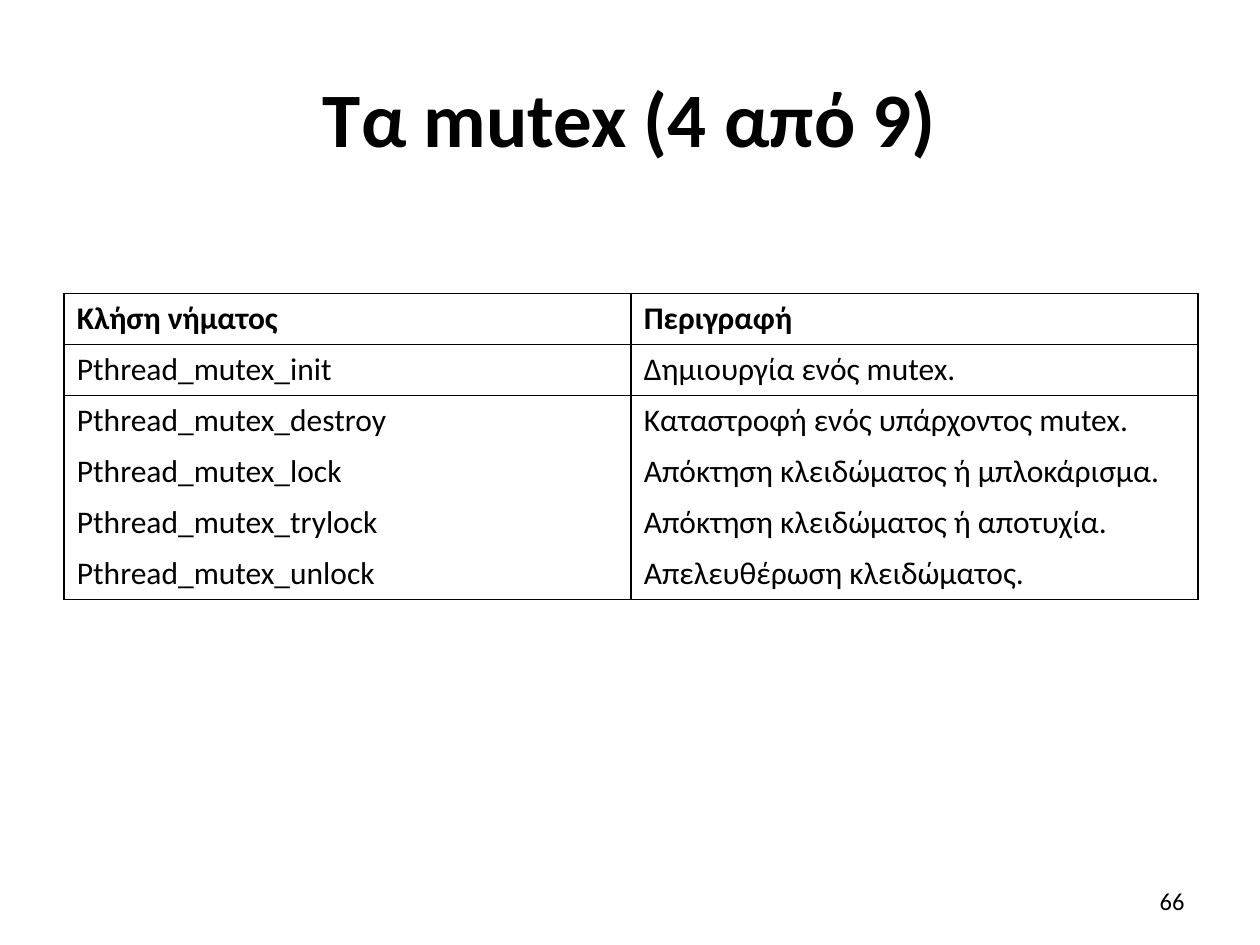
from dataclasses import dataclass

from lxml.etree import SubElement
from pptx import Presentation
from pptx.dml.color import RGBColor
from pptx.enum.text import MSO_ANCHOR, PP_ALIGN
from pptx.oxml.ns import qn
from pptx.util import Inches, Pt

WIDTH, HEIGHT = Inches(10), Inches(7.5)
FONT, BLACK = "Calibri", "000000"
ROW_HEIGHT = Inches(0.405)
CALLS = [
    ("Κλήση νήματος", "Περιγραφή"),
    ("Pthread_mutex_init", "Δημιουργία ενός mutex."),
    ("Pthread_mutex_destroy", "Καταστροφή ενός υπάρχοντος mutex."),
    ("Pthread_mutex_lock", "Απόκτηση κλειδώματος ή μπλοκάρισμα."),
    ("Pthread_mutex_trylock", "Απόκτηση κλειδώματος ή αποτυχία."),
    ("Pthread_mutex_unlock", "Απελευθέρωση κλειδώματος."),
]
RULED_EDGES = {0, 1, 2, len(CALLS)}  # horizontal edges, counted from the top


@dataclass
class Label:
    """Text in a box whose place is given as shares of the slide."""
    text: str
    left: float
    top: float
    width: float
    height: float
    size: int
    align: PP_ALIGN
    bold: bool = False


LABELS = [
    Label("Τα mutex (4 από 9)", 0.05, 0.04, 0.9, 1 / 6, 44, PP_ALIGN.CENTER, True),
    Label("66", 0.717, 0.927, 0.233, 0.053, 14, PP_ALIGN.RIGHT),
]


def color(value: str) -> RGBColor:
    return RGBColor.from_string(value)


def style_paragraph(paragraph, size: int, bold: bool, align: PP_ALIGN) -> None:
    paragraph.alignment = align
    font = paragraph.font
    font.name, font.size, font.bold = FONT, Pt(size), bold
    font.color.rgb = color(BLACK)


def draw_label(page, label: Label) -> None:
    box = page.shapes.add_textbox(
        int(label.left * WIDTH), int(label.top * HEIGHT),
        int(label.width * WIDTH), int(label.height * HEIGHT))
    frame = box.text_frame
    frame.word_wrap = True
    frame.vertical_anchor = MSO_ANCHOR.MIDDLE
    frame.text = label.text
    style_paragraph(frame.paragraphs[0], label.size, label.bold, label.align)


def set_borders(cell, top: bool, bottom: bool) -> None:
    """Rule both sides, and the top and bottom where asked."""
    properties = cell._tc.get_or_add_tcPr()
    for side, ruled in {"L": True, "R": True, "T": top, "B": bottom}.items():
        line = SubElement(properties, qn(f"a:ln{side}"), w=str(Pt(1)))
        if ruled:
            fill = SubElement(line, qn("a:solidFill"))
            SubElement(fill, qn("a:srgbClr"), val=BLACK)
        else:
            SubElement(line, qn("a:noFill"))


def draw_calls_table(page) -> None:
    table = page.shapes.add_table(
        len(CALLS), 2, Inches(0.51), Inches(2.33),
        Inches(9), ROW_HEIGHT * len(CALLS)).table
    table.first_row = table.horz_banding = False
    for row, texts in enumerate(CALLS):
        table.rows[row].height = ROW_HEIGHT
        for column, text in enumerate(texts):
            cell = table.cell(row, column)
            cell.text = text
            style_paragraph(cell.text_frame.paragraphs[0], 18, row == 0, PP_ALIGN.LEFT)
            set_borders(cell, row in RULED_EDGES, row + 1 in RULED_EDGES)
            cell.fill.background()


def main() -> None:
    deck = Presentation()
    deck.slide_width, deck.slide_height = WIDTH, HEIGHT
    page = deck.slides.add_slide(deck.slide_layouts[6])
    for label in LABELS:
        draw_label(page, label)
    draw_calls_table(page)
    deck.save("out.pptx")


if __name__ == "__main__":
    main()
